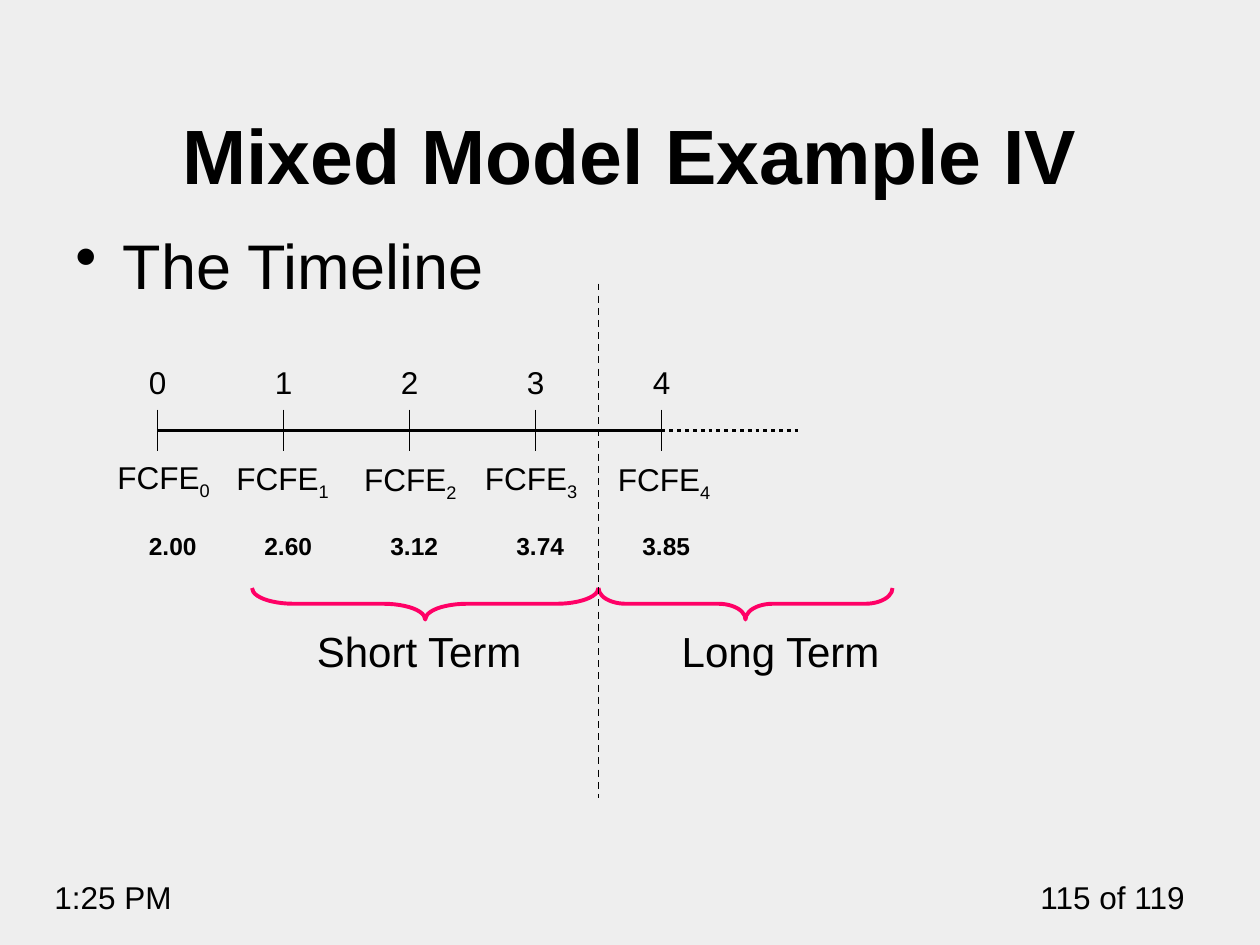
from dataclasses import dataclass

from lxml.etree import SubElement
from pptx import Presentation
from pptx.dml.color import RGBColor
from pptx.enum.dml import MSO_LINE_DASH_STYLE as Dash
from pptx.enum.shapes import MSO_CONNECTOR_TYPE as Connector, MSO_SHAPE as Shape
from pptx.enum.text import MSO_ANCHOR as Anchor, PP_ALIGN as Align
from pptx.oxml.ns import qn
from pptx.util import Pt


@dataclass(frozen=True)
class Theme:
    font: str = "Arial"
    background: RGBColor = RGBColor(0xEE, 0xEE, 0xEE)
    ink: RGBColor = RGBColor(0, 0, 0)
    accent: RGBColor = RGBColor(0xFF, 0x00, 0x66)
    title: int = 44
    body: int = 36
    term: int = 24
    label: int = 18
    value: int = 14
    thin: float = 1
    thick: float = 2.25


def write(frame, text, *, theme, size, bold=False, align=Align.LEFT,
          bullet_indent=None, subscript=None):
    """Fill a text frame with one formatted paragraph."""
    paragraph = frame.paragraphs[0]
    paragraph.alignment = align
    if bullet_indent:
        properties = paragraph._p.get_or_add_pPr()
        properties.set("marL", str(Pt(bullet_indent)))
        properties.set("indent", str(-Pt(bullet_indent)))
        SubElement(properties, qn("a:buChar")).set("char", "•")
    runs = [paragraph.add_run()]
    runs[0].text = text
    if subscript is not None:
        runs.append(paragraph.add_run())
        runs[1].text = subscript
        runs[1]._r.get_or_add_rPr().set("baseline", "-25000")
    for run in runs:
        run.font.name = theme.font
        run.font.size = Pt(size)
        run.font.bold = bold
        run.font.color.rgb = theme.ink


class SlideBuilder:
    def __init__(self, slide, theme):
        self.slide, self.theme = slide, theme
        slide.background.fill.solid()
        slide.background.fill.fore_color.rgb = theme.background

    def text(self, text, left, top, width, height, *, anchor=Anchor.TOP, **style):
        box = self.slide.shapes.add_textbox(Pt(left), Pt(top), Pt(width), Pt(height))
        box.text_frame.word_wrap = True
        box.text_frame.vertical_anchor = anchor
        write(box.text_frame, text, theme=self.theme, **style)

    def line(self, x1, y1, x2, y2, weight, dash=None):
        line = self.slide.shapes.add_connector(
            Connector.STRAIGHT, Pt(x1), Pt(y1), Pt(x2), Pt(y2))
        line.line.color.rgb = self.theme.ink
        line.line.width = Pt(weight)
        if dash:
            line.line.dash_style = dash
        SubElement(line._element.spPr, qn("a:effectLst"))

    def brace_below(self, left, right, top, depth, curl):
        """Left brace turned so that its point faces down."""
        span = right - left
        brace = self.slide.shapes.add_shape(
            Shape.LEFT_BRACE, Pt((left + right - depth) / 2),
            Pt(top + (depth - span) / 2), Pt(depth), Pt(span))
        brace.rotation = 270
        brace.adjustments[0] = curl
        brace.fill.background()
        brace.line.color.rgb = self.theme.accent
        brace.line.width = Pt(self.theme.thick)
        brace.shadow.inherit = False


def main():
    theme = Theme()
    deck = Presentation()
    deck.slide_width, deck.slide_height = Pt(720), Pt(540)
    page = SlideBuilder(deck.slides.add_slide(deck.slide_layouts[6]), theme)

    # Footer, title and bullet
    page.text("115 of 119", 570, 498, 114, 29, size=theme.label, align=Align.RIGHT)
    page.text("1:25 PM", 24, 498, 114, 29, size=theme.label)
    page.text("Mixed Model Example IV", 36, 28, 648, 90, size=theme.title,
              bold=True, align=Align.CENTER, anchor=Anchor.BOTTOM)
    page.text("The Timeline", 36, 126, 648, 54, size=theme.body, bullet_indent=27)

    # Timeline axis, continued by dots
    start, step, axis = 90, 72, 246
    # Cash flow value, then left and top of its label and left of the value
    cash_flows = [
        ("2.00", 60, 258, 78),
        ("2.60", 128, 258.75, 144),
        ("3.12", 201, 259.5, 216),
        ("3.74", 270, 258.75, 288),
        ("3.85", 346, 259.5, 360),
    ]
    end = start + step * (len(cash_flows) - 1)
    page.line(start, axis, end, axis, theme.thick)
    page.line(end, axis, 456, axis, theme.thick, Dash.ROUND_DOT)

    # Years with ticks and cash flows
    for year, (value, label_left, label_top, value_left) in enumerate(cash_flows):
        tick = start + step * year
        page.line(tick, axis - 12, tick, axis + 12, theme.thin)
        page.text(str(year), tick - 12, 204, 26, 29, size=theme.label)
        page.text("FCFE", label_left, label_top, 74, 29, size=theme.label,
                  subscript=str(year))
        page.text(value, value_left, 300, 44, 24, size=theme.value, bold=True)

    # Terms on both sides of the divider
    divider = 342
    page.brace_below(144, divider, 336, 18, 1.325)
    page.brace_below(divider, 510, 336, 18, 0.863)
    page.text("Short Term", 174, 354, 144, 36, size=theme.term)
    page.text("Long Term", 382.5, 354, 144, 36, size=theme.term)
    page.line(divider, 162, divider, 456, theme.thin, Dash.DASH)

    deck.save("out.pptx")


if __name__ == "__main__":
    main()
